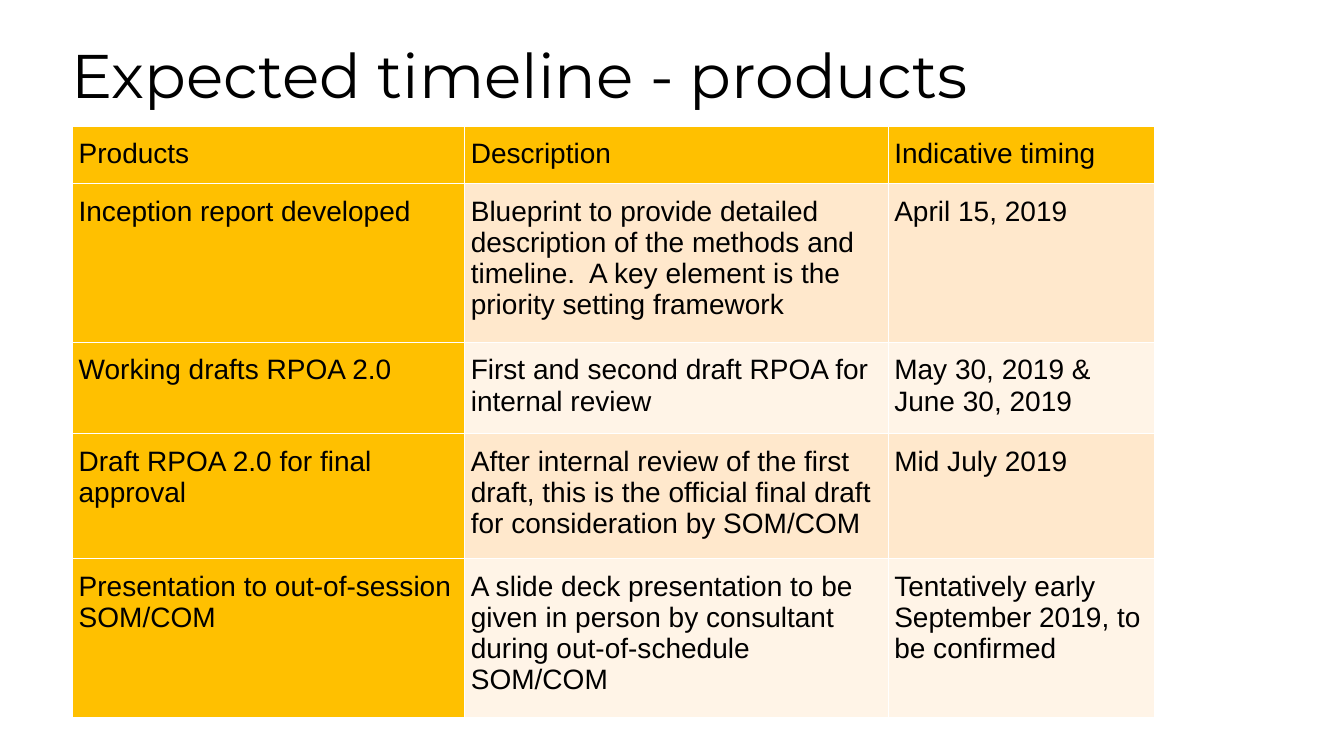
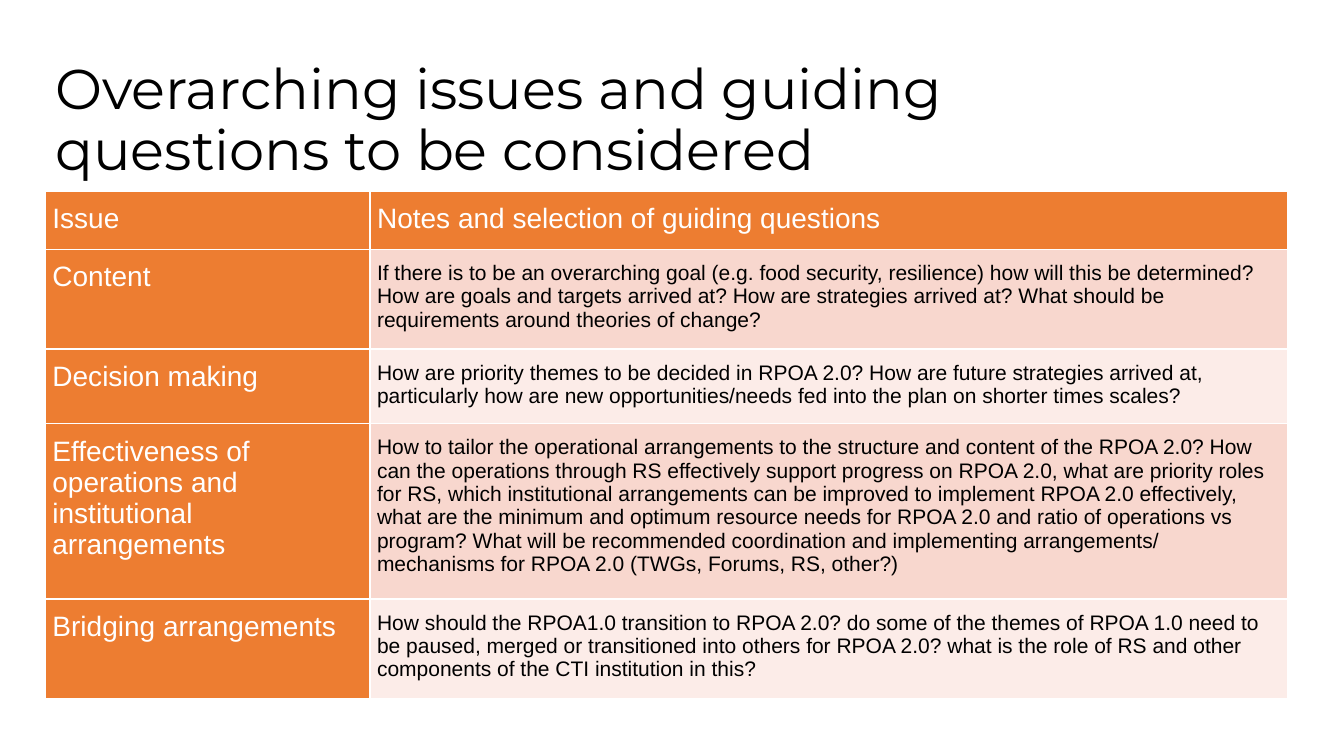
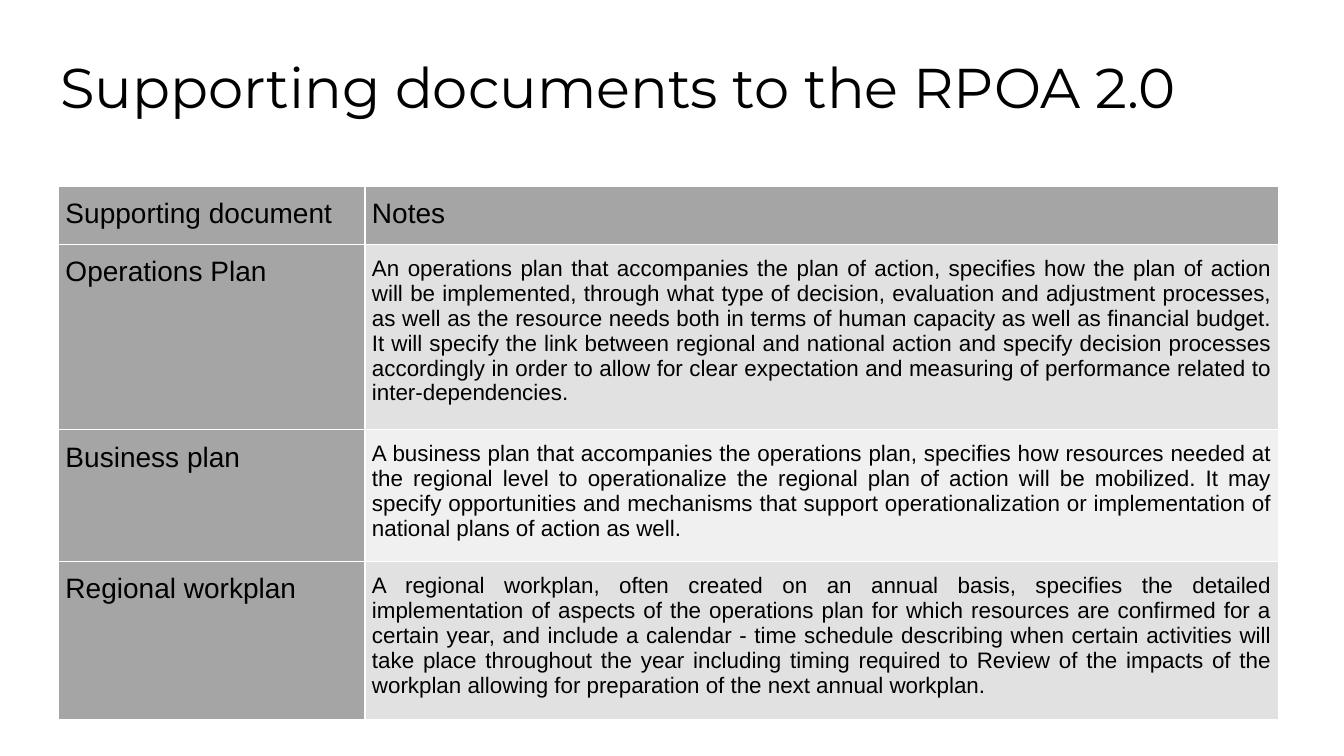
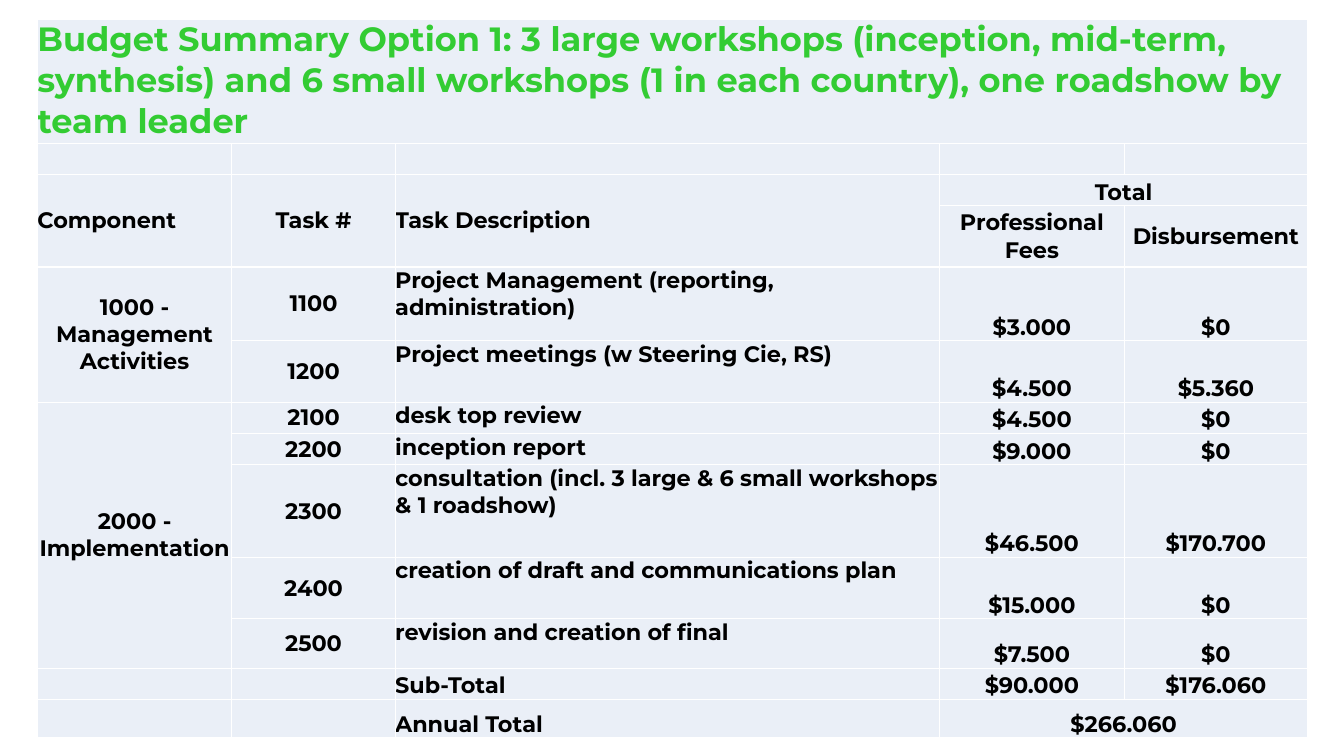
from lxml import etree
from pptx import Presentation
from pptx.dml.color import RGBColor
from pptx.enum.text import MSO_ANCHOR as Anchor, PP_ALIGN as Align
from pptx.oxml.ns import qn
from pptx.util import Inches, Pt

SLIDE_SIZE = (13.33, 7.5)
TITLE_HEIGHT = 1.45
BLACK, WHITE, GREEN, PALE_BLUE = "000000", "FFFFFF", "33CC33", "EAEFF7"
ANCHORS = {"t": Anchor.TOP, "m": Anchor.MIDDLE, "b": Anchor.BOTTOM}
ALIGNS = {"l": Align.LEFT, "c": Align.CENTER, "j": Align.JUSTIFY}

TABLE_SLIDES = [
    {
        "title": "Expected timeline - products",
        "title_at": (0.61, 0.4, 11.81), "title_size": 44,
        "table_at": (0.72, 1.25), "columns": [3.89, 4.2, 2.64],
        "heights": [0.38, 0.9, 0.67, 0.92, 1.23],
        "accent": "FFC000", "bands": ["FFE8CC", "FFF4E7"], "label_color": BLACK,
        "body_size": 20, "body_align": "l", "inset": 0.06,
        "rows": [
            ("Products", "Description", "Indicative timing"),
            ("Inception report developed",
             "Blueprint to provide detailed description of the methods and timeline.  A key element is the priority setting framework",
             "April 15, 2019"),
            ("Working drafts RPOA 2.0",
             "First and second draft RPOA for internal review",
             "May 30, 2019 & June 30, 2019"),
            ("Draft RPOA 2.0 for final approval",
             "After internal review of the first draft, this is the official final draft for consideration by SOM/COM",
             "Mid July 2019"),
            ("Presentation to out-of-session SOM/COM",
             "A slide deck presentation to be given in person by consultant during out-of-schedule SOM/COM",
             "Tentatively early September 2019, to be confirmed"),
        ],
    },
    {
        "title": "Overarching issues and guiding questions to be considered",
        "title_at": (0.45, 0.56, 11.5), "title_size": 40,
        "table_at": (0.45, 1.9), "columns": [3.22, 9.1],
        "heights": [0, 0.72, 0.72, 1.72, 0.72],
        "accent": "ED7D31", "bands": ["F8D7CE", "FCECE8"], "label_color": WHITE,
        "body_size": 15, "body_align": "l", "inset": 0.07,
        "rows": [
            ("Issue", "Notes and selection of guiding questions"),
            ("Content",
             "If there is to be an overarching goal (e.g. food security, resilience) how will this be determined? "
             "How are goals and targets arrived at? How are strategies arrived at? "
             "What should be requirements around theories of change?"),
            ("Decision making",
             "How are priority themes to be decided in RPOA 2.0? How are future strategies arrived at, "
             "particularly how are new opportunities/needs fed into the plan on shorter times scales?"),
            ("Effectiveness of operations and institutional arrangements",
             "How to tailor the operational arrangements to the structure and content of the RPOA 2.0? "
             "How can the operations through RS effectively support progress on RPOA 2.0, what are priority roles for RS, "
             "which institutional arrangements can be improved to implement RPOA 2.0 effectively, "
             "what are the minimum and optimum resource needs for RPOA 2.0 and ratio of operations vs program? "
             "What will be recommended coordination and implementing arrangements/ mechanisms for RPOA 2.0 "
             "(TWGs, Forums, RS, other?)"),
            ("Bridging arrangements",
             "How should the RPOA1.0 transition to RPOA 2.0? do some of the themes of RPOA 1.0 need to be paused, "
             "merged or transitioned into others for RPOA 2.0? "
             "what is the role of RS and other components of the CTI institution in this?"),
        ],
    },
    {
        "title": "Supporting documents to the RPOA 2.0",
        "title_at": (0.5, 0.55, 11.5), "title_size": 40,
        "table_at": (0.58, 1.85), "columns": [3.04, 9.06],
        "heights": [0, 1.47, 0.97, 1.47],
        "accent": "A5A5A5", "bands": ["E1E1E1", "F0F0F0"], "label_color": BLACK,
        "body_size": 16, "body_align": "j", "inset": 0.07,
        "rows": [
            ("Supporting document", "Notes"),
            ("Operations Plan",
             "An operations plan that accompanies the plan of action, specifies how the plan of action will be implemented, "
             "through what type of decision, evaluation and adjustment processes, as well as the resource needs "
             "both in terms of human capacity as well as financial budget. "
             "It will specify the link between regional and national action and specify decision processes accordingly "
             "in order to allow for clear expectation and measuring of performance related to inter-dependencies."),
            ("Business plan",
             "A business plan that accompanies the operations plan, specifies how resources needed at the regional level "
             "to operationalize the regional plan of action will be mobilized. "
             "It may specify opportunities and mechanisms that support operationalization or implementation "
             "of national plans of action as well."),
            ("Regional workplan",
             "A regional workplan, often created on an annual basis, specifies the detailed implementation of aspects "
             "of the operations plan for which resources are confirmed for a certain year, "
             "and include a calendar - time schedule describing when certain activities will take place throughout the year "
             "including timing required to Review of the impacts of the workplan "
             "allowing for preparation of the next annual workplan."),
        ],
    },
]

BUDGET_AT = (0.37, 0.19)
BUDGET_COLUMNS = [1.93, 1.62, 5.4, 1.83, 1.82]
BUDGET_TITLE = ("Budget Summary Option 1: 3 large workshops (inception, mid-term, synthesis) "
                "and 6 small workshops (1 in each country), one roadshow by team leader")
BUDGET_ROWS = [
    (1.23, "ttttt", "lclcc", (BUDGET_TITLE, "", "", "", "")),
    (0.31, "ttttt", "lclcc", ("", "", "", "", "")),
    (0.31, "mmmbb", "lclcc", ("Component", "Task #", "Task Description", "Total", "")),
    (0.61, "mmmmm", "lclcc", ("", "", "", "Professional Fees", "Disbursement")),
    (0.73, "mmtbb", "cclcc", ("1000 - Management Activities", "1100",
                              "Project Management (reporting, administration)", "$3.000", "$0")),
    (0.61, "mmtbb", "cclcc", ("", "1200", "Project meetings (w Steering Cie, RS)", "$4.500", "$5.360")),
    (0.31, "mmtbb", "cclcc", ("2000 - Implementation", "2100", "desk top review", "$4.500", "$0")),
    (0.31, "mmtbb", "cclcc", ("", "2200", "inception report", "$9.000", "$0")),
    (0.92, "mmtbb", "cclcc", ("", "2300", "consultation (incl. 3 large & 6 small workshops & 1 roadshow)",
                              "$46.500", "$170.700")),
    (0.61, "mmtbb", "cclcc", ("", "2400", "creation of draft and communications plan", "$15.000", "$0")),
    (0.49, "mmtbb", "cclcc", ("", "2500", "revision and creation of final", "$7.500", "$0")),
    (0.31, "bbbbb", "cclcc", ("", "", "Sub-Total", "$90.000", "$176.060")),
    (0.38, "bbbbb", "cclcc", ("", "", "Annual Total", "$266.060", "")),
]
BUDGET_MERGES = [
    ((0, 0), (0, 4)), ((2, 0), (3, 0)), ((2, 1), (3, 1)), ((2, 2), (3, 2)),
    ((2, 3), (2, 4)), ((4, 0), (5, 0)), ((6, 0), (10, 0)), ((12, 3), (12, 4)),
]


def color(value):
    return RGBColor.from_string(value)


def write(paragraph, text, align, size, font, text_color, bold=False):
    paragraph.alignment = ALIGNS[align]
    if not text:
        return
    run = paragraph.add_run()
    run.text = text
    for name, value in {"size": Pt(size), "name": font, "bold": bold}.items():
        setattr(run.font, name, value)
    run.font.color.rgb = color(text_color)


def add_title(slide, text, at, size):
    left, top, width = at
    box = slide.shapes.add_textbox(*map(Inches, (left, top, width, TITLE_HEIGHT)))
    box.text_frame.word_wrap = True
    paragraph = box.text_frame.paragraphs[0]
    paragraph.line_spacing = 0.9
    write(paragraph, text, "l", size, "Montserrat", BLACK)


def add_borders(cell):
    properties = cell._tc.get_or_add_tcPr()
    for side in "LRTB":
        line = etree.SubElement(properties, qn(f"a:ln{side}"), w=str(Pt(1)))
        fill = etree.SubElement(line, qn("a:solidFill"))
        etree.SubElement(fill, qn("a:srgbClr"), val=WHITE)


def add_grid(slide, at, columns, heights):
    size = (sum(columns), sum(heights))
    frame = slide.shapes.add_table(len(heights), len(columns), *map(Inches, at + size))
    table = frame.table
    table.first_row = table.horz_banding = False
    for column, width in zip(table.columns, columns):
        column.width = Inches(width)
    for row, height in zip(table.rows, heights):
        row.height = Inches(height)
    return table


def format_cell(cell, fill, insets, anchor="t"):
    add_borders(cell)
    cell.fill.solid()
    cell.fill.fore_color.rgb = color(fill)
    across, down = map(Inches, insets)
    values = {"margin_left": across, "margin_right": across, "margin_top": down,
              "margin_bottom": down, "vertical_anchor": ANCHORS[anchor]}
    for name, value in values.items():
        setattr(cell, name, value)


def add_table_slide(slide, content):
    add_title(slide, content["title"], content["title_at"], content["title_size"])
    table = add_grid(slide, content["table_at"], content["columns"], content["heights"])
    for r, texts in enumerate(content["rows"]):
        for c, text in enumerate(texts):
            cell = table.cell(r, c)
            is_label = r == 0 or c == 0
            fill = content["accent"] if is_label else content["bands"][(r - 1) % 2]
            format_cell(cell, fill, (content["inset"], 0.12))
            write(cell.text_frame.paragraphs[0], text,
                  "j" if r == 0 else content["body_align"],
                  20 if is_label else content["body_size"], "Arial",
                  content["label_color"] if is_label else BLACK)


def add_budget_slide(slide):
    table = add_grid(slide, BUDGET_AT, BUDGET_COLUMNS, [row[0] for row in BUDGET_ROWS])
    for r, (_, anchors, aligns, texts) in enumerate(BUDGET_ROWS):
        size, text_color = (24, GREEN) if r == 0 else (16, BLACK)
        for c, text in enumerate(texts):
            cell = table.cell(r, c)
            format_cell(cell, PALE_BLUE, (0, 0), anchors[c])
            write(cell.text_frame.paragraphs[0], text, aligns[c], size, "Montserrat", text_color, True)
    for first, last in BUDGET_MERGES:
        table.cell(*first).merge(table.cell(*last))


def main():
    presentation = Presentation()
    presentation.slide_width, presentation.slide_height = map(Inches, SLIDE_SIZE)
    blank = presentation.slide_layouts[6]
    for content in TABLE_SLIDES:
        add_table_slide(presentation.slides.add_slide(blank), content)
    add_budget_slide(presentation.slides.add_slide(blank))
    presentation.save("out.pptx")


if __name__ == "__main__":
    main()
